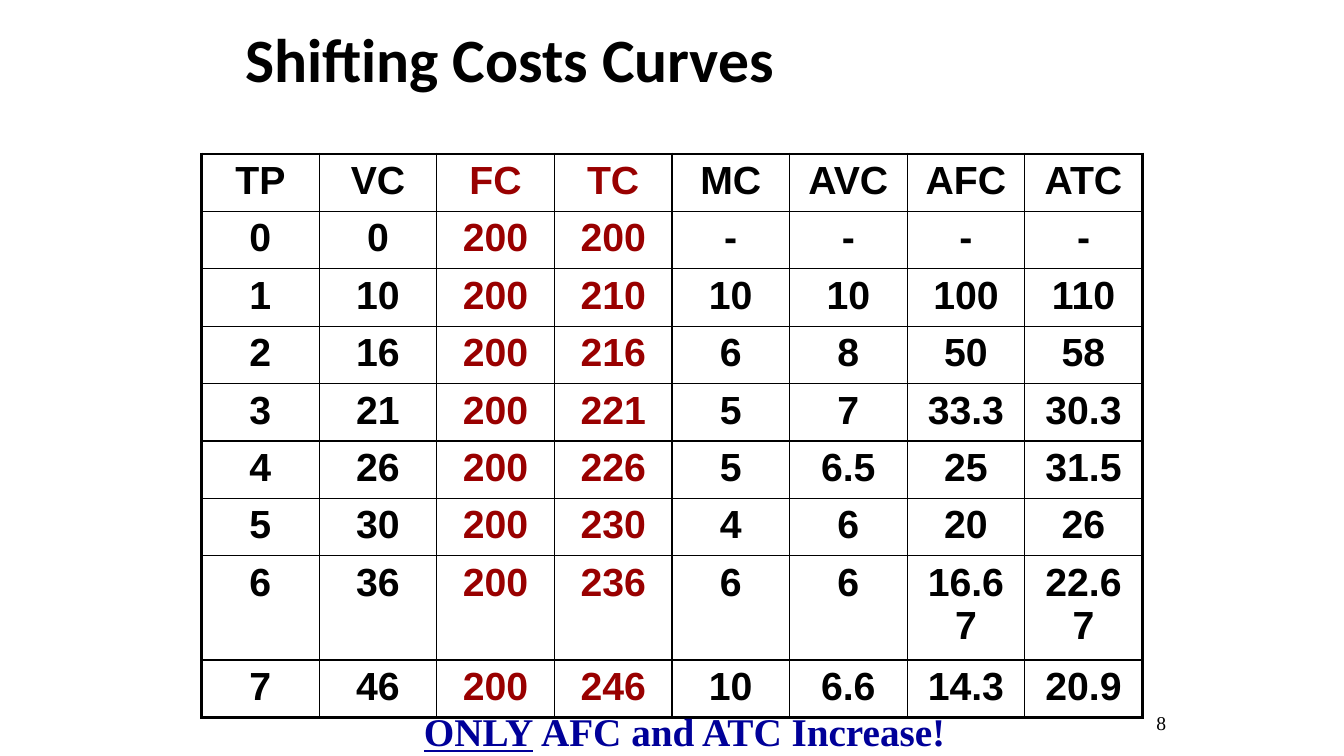
from lxml import etree
from pptx import Presentation
from pptx.dml.color import RGBColor
from pptx.enum.text import MSO_ANCHOR, PP_ALIGN
from pptx.oxml.ns import qn
from pptx.util import Pt

LEFT, CENTER, RIGHT = PP_ALIGN.LEFT, PP_ALIGN.CENTER, PP_ALIGN.RIGHT
TOP, MIDDLE = MSO_ANCHOR.TOP, MSO_ANCHOR.MIDDLE
BLANK_LAYOUT = 6

BLACK, RED, NAVY, WHITE = "000000", "990000", "000099", "FFFFFF"
TITLE_FONT = {"name": "Calibri", "size": Pt(44), "bold": True}
CELL_FONT = {"name": "Arial", "size": Pt(28), "bold": True}
NOTE_FONT = {"name": "Times New Roman", "size": Pt(28), "bold": True}
NUMBER_FONT = {"name": "Times New Roman", "size": Pt(14)}

COSTS = [
    ["TP", "VC", "FC", "TC", "MC", "AVC", "AFC", "ATC"],
    ["0", "0", "200", "200", "-", "-", "-", "-"],
    ["1", "10", "200", "210", "10", "10", "100", "110"],
    ["2", "16", "200", "216", "6", "8", "50", "58"],
    ["3", "21", "200", "221", "5", "7", "33.3", "30.3"],
    ["4", "26", "200", "226", "5", "6.5", "25", "31.5"],
    ["5", "30", "200", "230", "4", "6", "20", "26"],
    ["6", "36", "200", "236", "6", "6", "16.67", "22.67"],
    ["7", "46", "200", "246", "10", "6.6", "14.3", "20.9"],
]
RED_HEADINGS = ("FC", "TC")
FILLED_HEADINGS = ("AVC", "AFC", "ATC")
ROW_HEIGHT, TALL_ROW_HEIGHT, TALL_ROW = 41, 74, 7
INNER_LINE, OUTER_LINE = 1, 2.25


def color(hex_value):
    return RGBColor.from_string(hex_value)


def add_run(paragraph, text, font_values, hex_value):
    run = paragraph.add_run()
    run.text = text
    for name, value in font_values.items():
        setattr(run.font, name, value)
    run.font.color.rgb = color(hex_value)


def add_text(slide, box, runs, alignment, anchor=TOP, line_spacing=1.0):
    """Place one paragraph; runs holds (text, font values, colour)."""
    shape = slide.shapes.add_textbox(*map(Pt, box))
    frame = shape.text_frame
    frame.word_wrap = True
    frame.vertical_anchor = anchor
    paragraph = frame.paragraphs[0]
    paragraph.alignment = alignment
    paragraph.line_spacing = line_spacing
    for run in runs:
        add_run(paragraph, *run)


def set_borders(cell, widths):
    properties = cell._tc.get_or_add_tcPr()
    for side, width in widths.items():
        line = etree.SubElement(properties, qn(f"a:ln{side}"), w=str(Pt(width)))
        fill = etree.SubElement(line, qn("a:solidFill"))
        etree.SubElement(fill, qn("a:srgbClr"), val=BLACK)


def add_title(slide, box):
    add_text(slide, box, [("Shifting Costs Curves", TITLE_FONT, BLACK)],
             LEFT, MIDDLE, 0.9)


def add_cost_table(slide, box):
    headings = COSTS[0]
    last_row, last_column = len(COSTS) - 1, len(headings) - 1
    table = slide.shapes.add_table(len(COSTS), len(headings), *map(Pt, box)).table
    table.first_row = table.horz_banding = False

    # Sizes
    for column in table.columns:
        column.width = Pt(box[2] / len(headings))
    for index, row in enumerate(table.rows):
        row.height = Pt(TALL_ROW_HEIGHT if index == TALL_ROW else ROW_HEIGHT)

    # Cells, with a heavier line around the outside
    for row, values in enumerate(COSTS):
        for column, (heading, value) in enumerate(zip(headings, values)):
            cell = table.cell(row, column)
            paragraph = cell.text_frame.paragraphs[0]
            paragraph.alignment = CENTER
            add_run(paragraph, value, CELL_FONT,
                    RED if heading in RED_HEADINGS else BLACK)
            on_edge = {"L": column == 0, "R": column == last_column,
                       "T": row == 0, "B": row == last_row}
            set_borders(cell, {side: OUTER_LINE if edge else INNER_LINE
                               for side, edge in on_edge.items()})
            if heading in FILLED_HEADINGS:
                cell.fill.solid()
                cell.fill.fore_color.rgb = color(WHITE)
            else:
                cell.fill.background()


def add_conclusion(slide, box):
    add_text(slide, box, [
        ("ONLY", {**NOTE_FONT, "underline": True}, NAVY),
        (" AFC and ATC Increase!", NOTE_FONT, NAVY),
    ], CENTER)


def add_slide_number(slide, box):
    add_text(slide, box, [("8", NUMBER_FONT, BLACK)], RIGHT)


def main():
    presentation = Presentation()
    presentation.slide_width, presentation.slide_height = Pt(960), Pt(540)
    slide = presentation.slides.add_slide(presentation.slide_layouts[BLANK_LAYOUT])
    add_title(slide, (168, 0, 612, 90))
    add_cost_table(slide, (144, 110, 672, 402))
    add_conclusion(slide, (168, 502, 642, 41))
    add_slide_number(slide, (690, 504, 150, 36))
    presentation.save("out.pptx")


if __name__ == "__main__":
    main()
